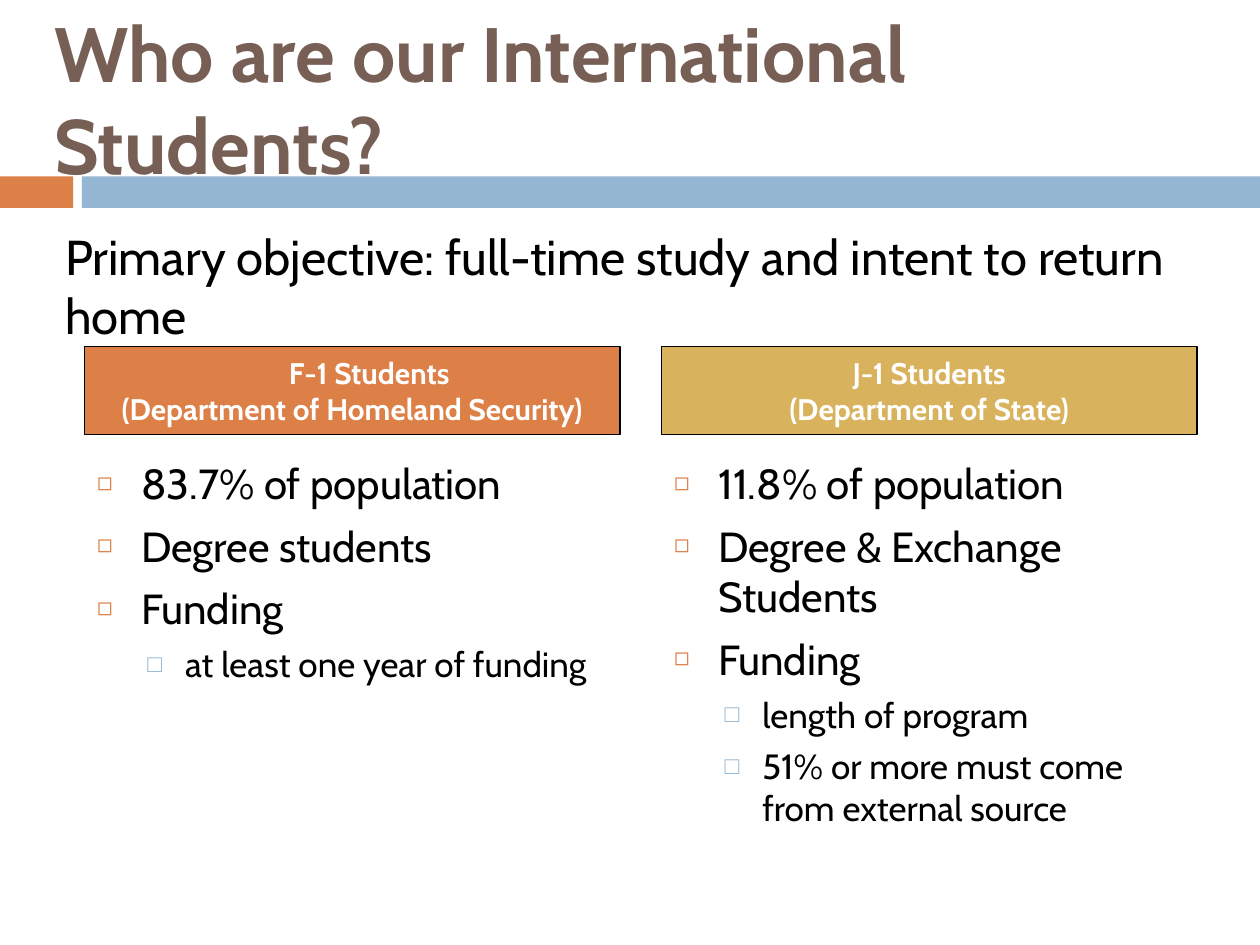
"""Build a slide comparing F-1 and J-1 international students."""
import pptx
import pptx.dml.color
import pptx.enum.shapes
import pptx.enum.text
import pptx.oxml
import pptx.oxml.ns
import pptx.util
from dataclasses import dataclass

Inches = pptx.util.Inches
Pt = pptx.util.Pt
Anchor = pptx.enum.text.MSO_ANCHOR
Align = pptx.enum.text.PP_ALIGN


@dataclass(frozen=True)
class Theme:
    font: str = "Cabin"
    brown: str = "775F55"
    orange: str = "DD8047"
    blue: str = "94B6D2"
    gold: str = "D8B25C"
    black: str = "000000"
    white: str = "FFFFFF"
    title: int = 44
    objective: int = 28
    header: int = 17
    levels: tuple = (24, 20)


THEME = Theme()
TITLE = "Who are our International Students?"
OBJECTIVE = "Primary objective: full-time study and intent to return home"
COLUMNS = [
    {
        "header": [("F-1 Students", 0.27), ("(Department of Homeland Security)", 0)],
        "fill": THEME.orange,
        "points": [
            (0, "83.7% of population"),
            (0, "Degree students"),
            (0, "Funding"),
            (1, "at least one year of funding"),
        ],
    },
    {
        "header": [("J-1 Students", 0), ("(Department of State)", 0)],
        "fill": THEME.gold,
        "points": [
            (0, "11.8% of population"),
            (0, "Degree & Exchange Students"),
            (0, "Funding"),
            (1, "length of program"),
            (1, "51% or more must come from external source"),
        ],
    },
]
BULLETS = [
    {"character": "◻", "color": THEME.orange, "size": 60, "left": 0.35, "hanging": 0.35, "before": 7},
    {"character": "□", "color": THEME.blue, "size": 70, "left": 0.7, "hanging": 0.3, "before": 5.5},
]
SLIDE_WIDTH, SLIDE_HEIGHT = 10, 7.5
COLUMN_LEFT, COLUMN_WIDTH, COLUMN_GAP = 0.67, 4.25, 0.33
HEADER_TOP, HEADER_HEIGHT, BODY_TOP = 2.75, 0.7, 3.58
BAND_TOP, BAND_HEIGHT, BAND_SPLIT, BAND_GAP = 1.4, 0.25, 0.58, 0.07


def color(value):
    return pptx.dml.color.RGBColor.from_string(value)


def place(shape, left, top, width, height):
    shape.left, shape.top = Inches(left), Inches(top)
    shape.width, shape.height = Inches(width), Inches(height)


def prepare(shape, anchor):
    frame = shape.text_frame
    frame.word_wrap = True
    frame.auto_size = pptx.enum.text.MSO_AUTO_SIZE.NONE
    frame.vertical_anchor = anchor
    return frame


def style(paragraph, size, tint, bold=False, align=Align.LEFT, before=0):
    paragraph.alignment = align
    paragraph.space_before = Pt(before)
    paragraph.font.name = THEME.font
    paragraph.font.size = Pt(size)
    paragraph.font.bold = bold
    paragraph.font.color.rgb = color(tint)


def indent(paragraph, left, hanging=0):
    properties = paragraph._p.get_or_add_pPr()
    properties.set("marL", str(Inches(left)))
    properties.set("indent", str(-Inches(hanging)))
    return properties


def add_bullet(paragraph, bullet):
    properties = indent(paragraph, bullet["left"], bullet["hanging"])
    namespace = pptx.oxml.ns.nsdecls("a")
    for markup in (
        f'<a:buClr {namespace}><a:srgbClr val="{bullet["color"]}"/></a:buClr>',
        f'<a:buSzPct {namespace} val="{bullet["size"] * 1000}"/>',
        f'<a:buChar {namespace} char="{bullet["character"]}"/>',
    ):
        properties.append(pptx.oxml.parse_xml(markup))


def paragraphs(frame, items):
    for index, item in enumerate(items):
        yield index, frame.paragraphs[0] if index == 0 else frame.add_paragraph(), item


def add_band(slide, left, width, fill):
    band = slide.shapes.add_shape(
        pptx.enum.shapes.MSO_SHAPE.RECTANGLE,
        Inches(left), Inches(BAND_TOP), Inches(width), Inches(BAND_HEIGHT),
    )
    band.shadow.inherit = False
    band.fill.solid()
    band.fill.fore_color.rgb = color(fill)
    band.line.fill.background()
    slide.shapes._spTree.insert(2, band._element)


def fill_header(header, column, left):
    place(header, left, HEADER_TOP, COLUMN_WIDTH, HEADER_HEIGHT)
    header.fill.solid()
    header.fill.fore_color.rgb = color(column["fill"])
    header.line.color.rgb = color(THEME.black)
    header.line.width = Pt(0.75)
    frame = prepare(header, Anchor.MIDDLE)
    for _, paragraph, (text, offset) in paragraphs(frame, column["header"]):
        paragraph.text = text
        indent(paragraph, offset)
        style(paragraph, THEME.header, THEME.white, True, Align.CENTER)


def fill_body(body, column, left):
    place(body, left, BODY_TOP, COLUMN_WIDTH, SLIDE_HEIGHT - BODY_TOP)
    frame = prepare(body, Anchor.TOP)
    for index, paragraph, (level, text) in paragraphs(frame, column["points"]):
        paragraph.text = text
        paragraph.level = level
        add_bullet(paragraph, BULLETS[level])
        before = BULLETS[level]["before"] if index else 0
        style(paragraph, THEME.levels[level], THEME.black, before=before)


def main():
    presentation = pptx.Presentation()
    presentation.slide_width = Inches(SLIDE_WIDTH)
    presentation.slide_height = Inches(SLIDE_HEIGHT)
    slide = presentation.slides.add_slide(presentation.slide_layouts.get_by_name("Comparison"))
    placeholders = {shape.placeholder_format.idx: shape for shape in slide.placeholders}

    blue_left = BAND_SPLIT + BAND_GAP
    add_band(slide, blue_left, SLIDE_WIDTH - blue_left, THEME.blue)
    add_band(slide, 0, BAND_SPLIT, THEME.orange)

    title = slide.shapes.title
    place(title, 0.33, 0.3, 9.42, 0.95)
    paragraph = prepare(title, Anchor.MIDDLE).paragraphs[0]
    paragraph.text = TITLE
    style(paragraph, THEME.title, THEME.brown, True)

    for index, column in enumerate(COLUMNS):
        left = COLUMN_LEFT + index * (COLUMN_WIDTH + COLUMN_GAP)
        fill_header(placeholders[1 + 2 * index], column, left)
        fill_body(placeholders[2 + 2 * index], column, left)

    objective = slide.shapes.add_textbox(Inches(0.42), Inches(1.75), Inches(9.25), Inches(0.98))
    paragraph = prepare(objective, Anchor.TOP).paragraphs[0]
    paragraph.text = OBJECTIVE
    style(paragraph, THEME.objective, THEME.black)

    presentation.save("out.pptx")


if __name__ == "__main__":
    main()
